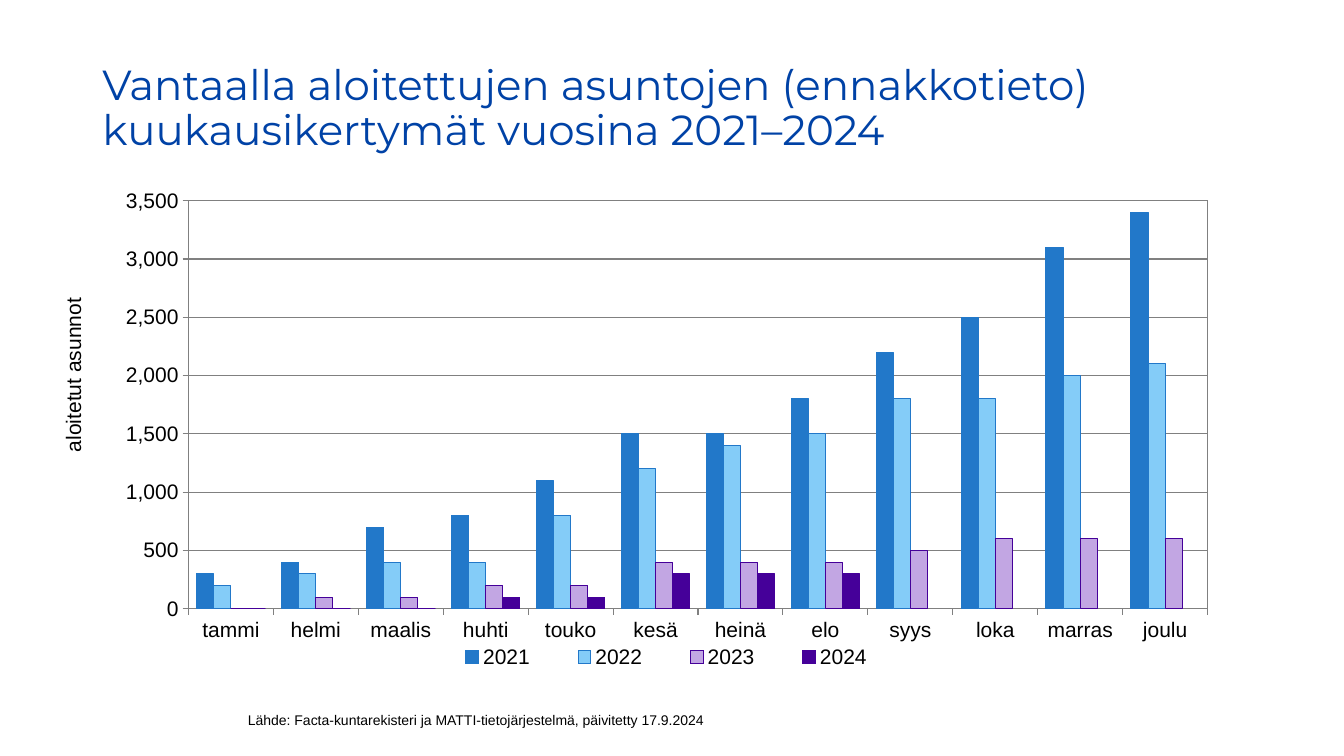
from pptx import Presentation
from pptx.chart.data import CategoryChartData
from pptx.dml.color import RGBColor
from pptx.enum.chart import XL_CHART_TYPE as ChartType, XL_LEGEND_POSITION as LegendPosition
from pptx.enum.chart import XL_TICK_MARK as TickMark
from pptx.enum.text import MSO_ANCHOR as Anchor, PP_ALIGN as Align
from pptx.oxml import parse_xml
from pptx.oxml.ns import nsdecls, qn
from pptx.util import Pt


def color(hex_string):
    return RGBColor.from_string(hex_string)


def place(element, index, **layout):
    for old in element.findall(qn("c:layout")):
        element.remove(old)
    parts = "".join(f'<c:{tag} val="{value}"/>' for tag, value in layout.items())
    element.insert(index, parse_xml(
        f'<c:layout {nsdecls("c")}><c:manualLayout>{parts}</c:manualLayout></c:layout>'))


MONTHS = ["tammi", "helmi", "maalis", "huhti", "touko", "kesä",
          "heinä", "elo", "syys", "loka", "marras", "joulu"]
YEARS = [
    ("2021", "2278C9", "2278C9",
     [300, 400, 700, 800, 1100, 1500, 1500, 1800, 2200, 2500, 3100, 3400]),
    ("2022", "84CCF8", "2278C9",
     [200, 300, 400, 400, 800, 1200, 1400, 1500, 1800, 1800, 2000, 2100]),
    ("2023", "C2A6E3", "450099",
     [0, 100, 100, 200, 200, 400, 400, 400, 500, 600, 600, 600]),
    ("2024", "450099", "450099",
     [0, 0, 0, 100, 100, 300, 300, 300] + [None] * 4),
]
GRAY = "808080"

presentation = Presentation()
presentation.slide_width = Pt(960)
presentation.slide_height = Pt(540)
slide = presentation.slides.add_slide(presentation.slide_layouts[5])

title = slide.shapes.title
title.left, title.top, title.width, title.height = Pt(66), Pt(42), Pt(797), Pt(78.5)
source = slide.shapes.add_textbox(Pt(170), Pt(505), Pt(660), Pt(29))

for shape, text, font_name, size, text_color, spacing in [
    (title, "Vantaalla aloitettujen asuntojen (ennakkotieto) kuukausikertymät vuosina 2021–2024",
     "Montserrat", 30, "0042A6", 0.9),
    (source, "Lähde: Facta-kuntarekisteri ja MATTI-tietojärjestelmä, päivitetty 17.9.2024",
     "Arial", 10, "000000", 1.0),
]:
    frame = shape.text_frame
    frame.word_wrap = True
    frame.vertical_anchor = Anchor.TOP
    paragraph = frame.paragraphs[0]
    paragraph.alignment = Align.LEFT
    paragraph.line_spacing = spacing
    paragraph.space_before = Pt(0)
    run = paragraph.add_run()
    run.text = text
    run.font.name = font_name
    run.font.size = Pt(size)
    run.font.color.rgb = color(text_color)

chart_data = CategoryChartData()
chart_data.categories = MONTHS
for year, fill_color, line_color, values in YEARS:
    chart_data.add_series(year, values)
chart = slide.shapes.add_chart(
    ChartType.COLUMN_CLUSTERED, Pt(40), Pt(128.5), Pt(823), Pt(355), chart_data).chart
chart.has_title = False
chart.font.name = "Arial"
chart.font.size = Pt(15)
chart.font.color.rgb = color("000000")

plot = chart.plots[0]
plot.gap_width = 96
plot.overlap = 0
plot.vary_by_categories = False
for series, (year, fill_color, line_color, values) in zip(plot.series, YEARS):
    series.format.fill.solid()
    series.format.fill.fore_color.rgb = color(fill_color)
    series.format.line.color.rgb = color(line_color)
    series.format.line.width = Pt(0.75)

value_axis = chart.value_axis
value_axis.minimum_scale = 0
value_axis.maximum_scale = 3500
value_axis.major_unit = 500
value_axis.has_major_gridlines = True
value_axis.tick_labels.number_format = "#,##0"
value_axis.tick_labels.number_format_is_linked = False
for axis in (value_axis, chart.category_axis):
    axis.major_tick_mark = TickMark.OUTSIDE
for line in (value_axis.format.line, chart.category_axis.format.line,
             value_axis.major_gridlines.format.line):
    line.color.rgb = color(GRAY)
    line.width = Pt(0.75)

axis_title = value_axis.axis_title
axis_title.text_frame._txBody.bodyPr.set("rot", "-5400000")
axis_title.text_frame._txBody.bodyPr.set("vert", "horz")
run = axis_title.text_frame.paragraphs[0].add_run()
run.text = "aloitetut asunnot"
run.font.name = "Arial"
run.font.size = Pt(15)
run.font.bold = False
run.font.color.rgb = color("000000")

chart.has_legend = True
chart.legend.position = LegendPosition.BOTTOM
chart.legend.include_in_layout = False

plot_area = chart._chartSpace.chart.plotArea
place(plot_area, 0, layoutTarget="inner", xMode="edge", yMode="edge",
      x=0.115, y=0.042, w=0.885, h=0.821)
place(axis_title._element, 1, xMode="edge", yMode="edge", x=0, y=0.23)
place(chart.legend._element, 1, xMode="edge", yMode="edge", x=0.32, y=0.93, w=0.42, h=0.06)
plot_area.append(parse_xml(
    f'<c:spPr {nsdecls("c", "a")}><a:noFill/><a:ln w="9525"><a:solidFill>'
    f'<a:srgbClr val="{GRAY}"/></a:solidFill></a:ln></c:spPr>'))

presentation.save("out.pptx")
